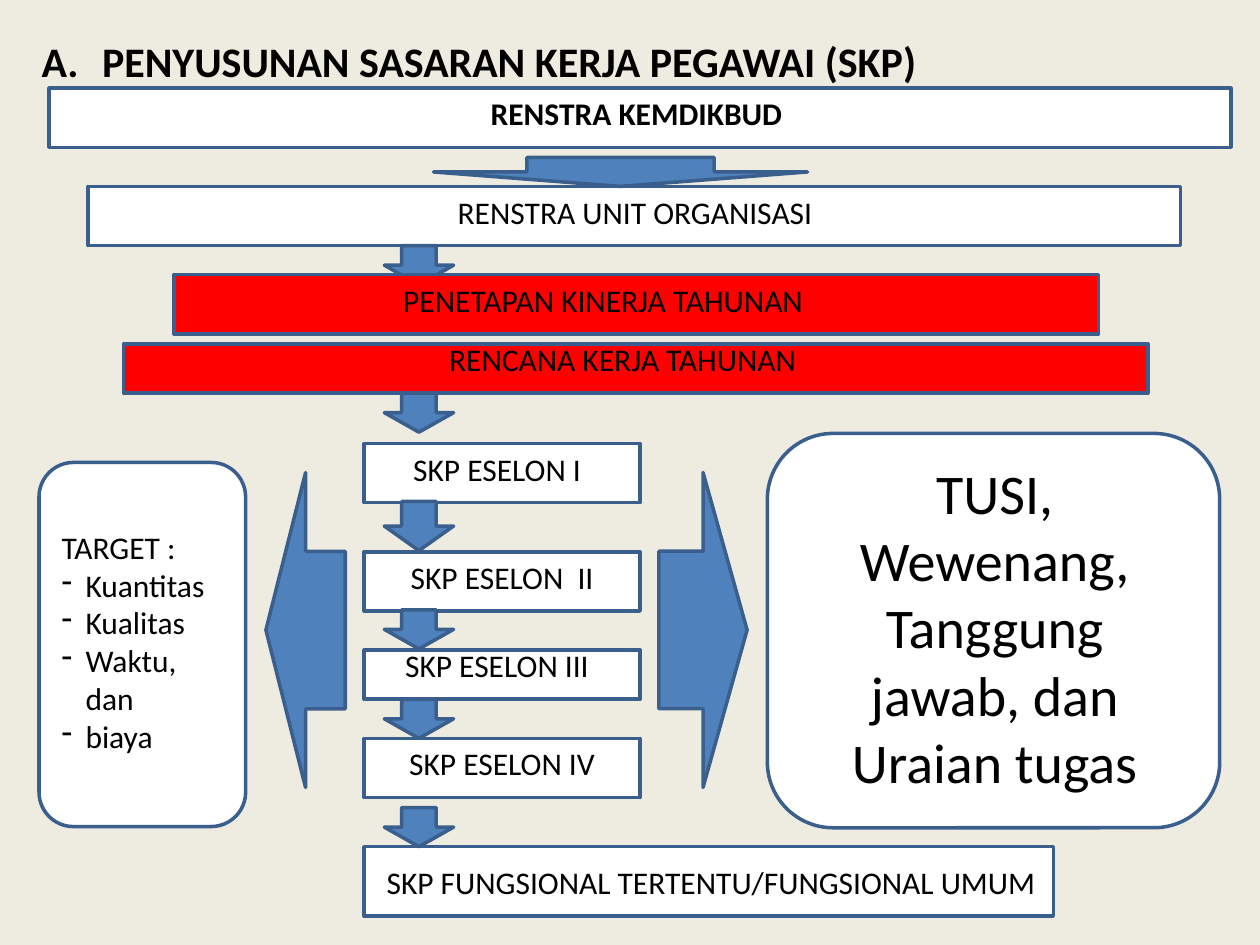
from lxml import etree
from pptx import Presentation, util as u
from pptx.dml.color import RGBColor
from pptx.enum import shapes, text
from pptx.oxml.ns import qn

KIND = shapes.MSO_SHAPE
CENTER, LEFT = text.PP_ALIGN.CENTER, text.PP_ALIGN.LEFT


def color(value):
    return RGBColor.from_string(value)


def write(paragraph, content, size=18, bold=False, align=CENTER, font="Calibri", ink="000000"):
    paragraph.alignment = align
    run = paragraph.add_run()
    run.text = content
    run.font.name = font
    run.font.size = u.Pt(size)
    run.font.bold = bold
    run.font.color.rgb = color(ink)


def add_tab(paragraph, position):
    tabs = etree.SubElement(paragraph._p.get_or_add_pPr(), qn("a:tabLst"))
    etree.SubElement(tabs, qn("a:tab"), pos=str(u.Inches(position)), algn="l")


def add_dash(paragraph, indent=0.19):
    properties = paragraph._p.get_or_add_pPr()
    properties.set("marL", str(u.Inches(indent)))
    properties.set("indent", str(-u.Inches(indent)))
    etree.SubElement(properties, qn("a:buChar"), char="-")


class Diagram:
    white, red, blue, outline = "FFFFFF", "FF0000", "4F81BD", "3A5F8C"

    def __init__(self, slide, background):
        self.slide = slide
        slide.background.fill.solid()
        slide.background.fill.fore_color.rgb = color(background)

    def title(self, content, *place):
        shape = self.slide.shapes.title
        shape.left, shape.top, shape.width, shape.height = map(u.Inches, place)
        frame = shape.text_frame
        frame.vertical_anchor = text.MSO_ANCHOR.TOP
        frame.auto_size = text.MSO_AUTO_SIZE.NONE
        write(frame.paragraphs[0], content, size=24, bold=True, align=LEFT)
        add_tab(frame.paragraphs[0], 0.48)

    def shape(self, kind, fill, *place):
        shape = self.slide.shapes.add_shape(kind, *map(u.Inches, place))
        shape.shadow.inherit = False
        shape.fill.solid()
        shape.fill.fore_color.rgb = color(fill)
        shape.line.color.rgb = color(self.outline)
        shape.line.width = u.Pt(2)
        return shape

    def label(self, lines, *place, dashed=False, **style):
        box = self.slide.shapes.add_textbox(*map(u.Inches, place))
        frame = box.text_frame
        frame.word_wrap = True
        frame.auto_size = text.MSO_AUTO_SIZE.SHAPE_TO_FIT_TEXT
        for index, line in enumerate(lines):
            paragraph = frame.add_paragraph() if index else frame.paragraphs[0]
            write(paragraph, line, **style)
            if dashed and index:
                add_dash(paragraph)

    def bar(self, content, fill, place, label_place, **style):
        """A rectangle with its caption: label_place is left, top, width."""
        self.shape(KIND.RECTANGLE, fill, *place)
        self.label([content], *label_place, 0.4, **style)


def main():
    presentation = Presentation()
    presentation.slide_width, presentation.slide_height = u.Inches(10), u.Inches(7.5)
    slide = presentation.slides.add_slide(presentation.slide_layouts[5])
    diagram = Diagram(slide, "EEECE1")
    white, red, blue = diagram.white, diagram.red, diagram.blue

    diagram.title("A.\tPENYUSUNAN SASARAN KERJA PEGAWAI (SKP)", 0.23, 0.23, 9.22, 0.5)

    # Planning levels
    diagram.bar("RENSTRA KEMDIKBUD ", white, (0.39, 0.7, 9.38, 0.47), (0.47, 0.7, 9.22), bold=True)
    diagram.bar("RENSTRA UNIT ORGANISASI", white, (0.7, 1.48, 8.67, 0.47), (0.78, 1.48, 8.52))
    diagram.bar("RENCANA KERJA TAHUNAN ", red, (0.98, 2.73, 8.13, 0.39), (1.14, 2.65, 7.66))

    # SKP levels: caption, top, height, caption left, top and width
    column, width = 2.89, 2.19
    for content, top, height, label_place in [
        ("SKP ESELON I", 3.52, 0.47, (2.97, 3.52, 1.95)),
        ("SKP ESELON  II", 4.38, 0.47, (2.89, 4.38, 2.19)),
        ("SKP ESELON III", 5.16, 0.39, (2.81, 5.08, 2.27)),
        ("SKP ESELON IV", 5.86, 0.47, (2.97, 5.86, 2.03)),
    ]:
        diagram.bar(content, white, (column, top, width, height), label_place)
    diagram.bar("SKP FUNGSIONAL TERTENTU/FUNGSIONAL UMUM", white,
                (column, 6.72, 5.47, 0.55), (2.97, 6.8, 5.47), align=LEFT)

    # Arrows down the levels
    diagram.shape(KIND.DOWN_ARROW, blue, 3.44, 1.25, 2.97, 0.23)
    for top, height in [(1.95, 0.31), (3.12, 0.31), (3.98, 0.39),
                        (4.84, 0.31), (5.55, 0.31), (6.41, 0.31)]:
        diagram.shape(KIND.DOWN_ARROW, blue, 3.05, top, 0.55, height)

    # Covers the tip of the arrow above it
    diagram.bar("PENETAPAN KINERJA TAHUNAN ", red, (1.38, 2.18, 7.34, 0.47), (1.22, 2.18, 7.19))

    # Duties on the right
    diagram.shape(KIND.ROUNDED_RECTANGLE, white, 6.09, 3.44, 3.59, 3.13)
    diagram.label(["TUSI,", "Wewenang,", "Tanggung jawab, dan", "Uraian tugas"],
                  6.41, 3.59, 2.97, 2.79, size=32)
    diagram.shape(KIND.RIGHT_ARROW, blue, 5.23, 3.75, 0.7, 2.5)

    # Targets on the left
    diagram.shape(KIND.ROUNDED_RECTANGLE, white, 0.31, 3.67, 1.64, 2.89)
    diagram.shape(KIND.RIGHT_ARROW, blue, 2.11, 3.75, 0.63, 2.5).rotation = 180
    diagram.label(["TARGET :", "Kuantitas", "Kualitas", "Waktu, dan", "biaya"],
                  0.39, 4.14, 1.41, 1.92, dashed=True, align=LEFT)

    presentation.save("out.pptx")


if __name__ == "__main__":
    main()
